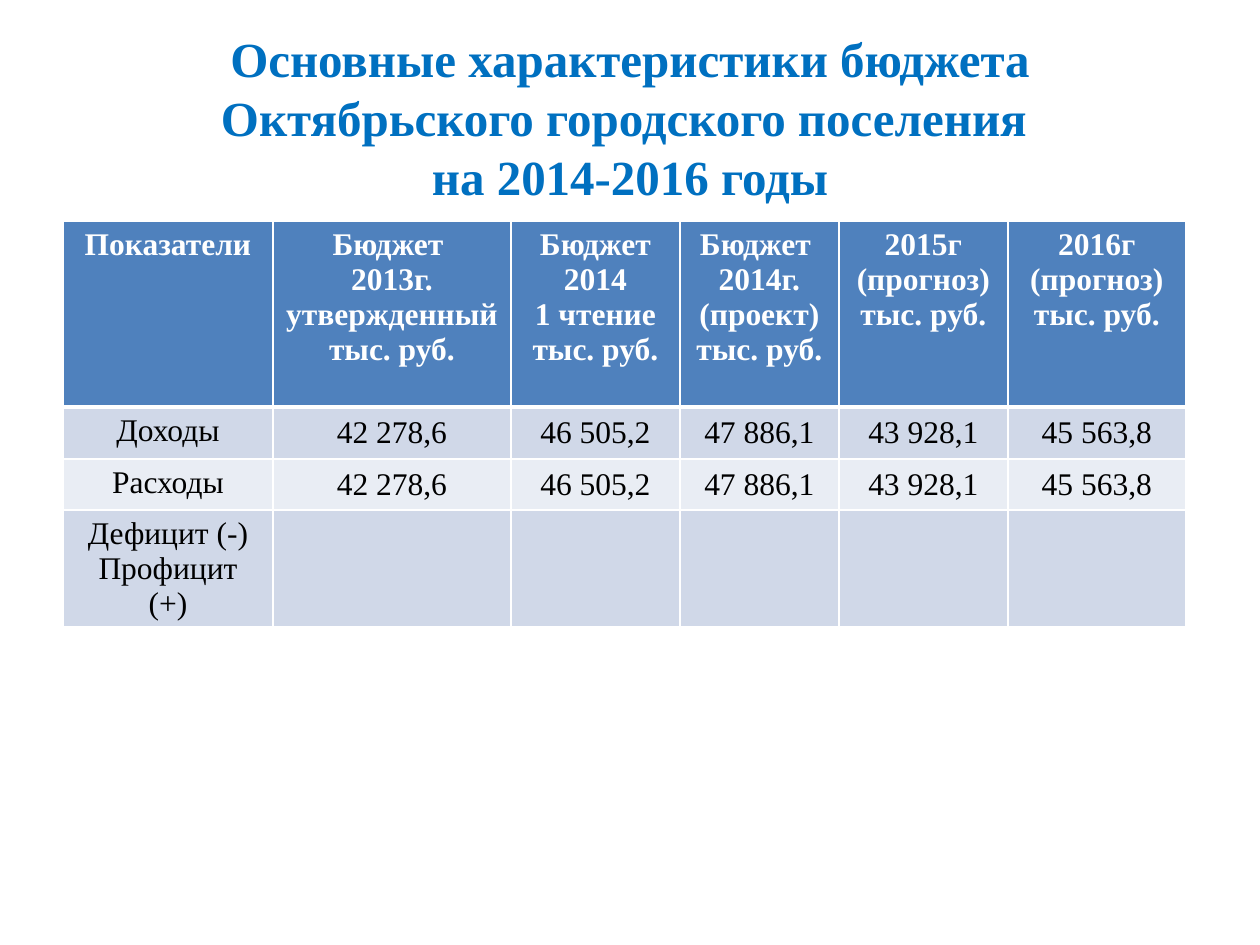
from dataclasses import dataclass

from lxml import etree
from pptx import Presentation
from pptx.dml.color import RGBColor
from pptx.enum.text import MSO_ANCHOR, PP_ALIGN
from pptx.oxml.ns import qn
from pptx.util import Emu, Pt

PX = 914400 // 126
CENTER = PP_ALIGN.CENTER
TOP, MIDDLE = MSO_ANCHOR.TOP, MSO_ANCHOR.MIDDLE
FONT = "Times New Roman"
COLORS = {
    "title": "0070C0",
    "header": "4F81BD",
    "odd_band": "D0D8E8",
    "even_band": "E9EDF4",
    "white": "FFFFFF",
    "black": "000000",
}


@dataclass
class BudgetRow:
    height: int
    fill: str
    texts: list[str]
    color: str = "black"
    bold: bool = False
    value_anchor: MSO_ANCHOR = MIDDLE
    bottom_border: int = 1


AMOUNTS = ["42 278,6", "46 505,2", "47 886,1", "43 928,1", "45 563,8"]
COLUMN_WIDTHS = [210, 238, 169, 159, 169, 178]
BUDGET_ROWS = [
    BudgetRow(186, "header", [
        "Показатели",
        "Бюджет \n2013г.\nутвержденный\nтыс. руб.",
        "Бюджет\n2014\n1 чтение\nтыс. руб.",
        "Бюджет \n2014г.\n(проект)\nтыс. руб.",
        "2015г\n(прогноз)\nтыс. руб.",
        "2016г\n(прогноз)\nтыс. руб.",
    ], color="white", bold=True, value_anchor=TOP, bottom_border=3),
    BudgetRow(52, "odd_band", ["Доходы", *AMOUNTS]),
    BudgetRow(51, "even_band", ["Расходы", *AMOUNTS]),
    BudgetRow(116, "odd_band", ["Дефицит (-)\nПрофицит (+)"] + [""] * len(AMOUNTS)),
]


def px(length: int) -> Emu:
    return Emu(length * PX)


def rgb(name: str) -> RGBColor:
    return RGBColor.from_string(COLORS[name])


def style_text(frame, size: int, color: str, bold: bool) -> None:
    for paragraph in frame.paragraphs:
        paragraph.alignment = CENTER
        font = paragraph.font
        font.name, font.size, font.bold = FONT, Pt(size), bold
        font.color.rgb = rgb(color)


def set_borders(cell, bottom: int, top: int) -> None:
    properties = cell._tc.get_or_add_tcPr()
    widths = {"a:lnL": 1, "a:lnR": 1, "a:lnT": top, "a:lnB": bottom}
    for position, (side, width) in enumerate(widths.items()):
        line = etree.Element(qn(side), w=str(Pt(width)))
        fill = etree.SubElement(line, qn("a:solidFill"))
        etree.SubElement(fill, qn("a:srgbClr"), val=COLORS["white"])
        properties.insert(position, line)


def draw_title(slide, text: str) -> None:
    title = slide.shapes.title
    title.left, title.top, title.width, title.height = map(px, (63, 38, 1134, 158))
    title.text_frame.text = text
    title.text_frame.vertical_anchor = MIDDLE
    style_text(title.text_frame, 28, "title", True)


def draw_budget_table(slide, left: int, top: int) -> None:
    total_height = sum(row.height for row in BUDGET_ROWS)
    table = slide.shapes.add_table(
        len(BUDGET_ROWS), len(COLUMN_WIDTHS),
        px(left), px(top), px(sum(COLUMN_WIDTHS)), px(total_height),
    ).table
    for column, width in zip(table.columns, COLUMN_WIDTHS):
        column.width = px(width)
    border_above = 1
    for row_index, row in enumerate(BUDGET_ROWS):
        table.rows[row_index].height = px(row.height)
        for column_index, text in enumerate(row.texts):
            cell = table.cell(row_index, column_index)
            cell.text = text
            cell.vertical_anchor = row.value_anchor if column_index else TOP
            cell.fill.solid()
            cell.fill.fore_color.rgb = rgb(row.fill)
            style_text(cell.text_frame, 18, row.color, row.bold)
            set_borders(cell, row.bottom_border, border_above)
        border_above = row.bottom_border


def main() -> None:
    presentation = Presentation()
    presentation.slide_width, presentation.slide_height = px(1260), px(945)
    # Title Only layout
    slide = presentation.slides.add_slide(presentation.slide_layouts[5])
    draw_title(slide, "Основные характеристики бюджета Октябрьского "
                      "городского поселения \vна 2014-2016 годы")
    draw_budget_table(slide, 63, 221)
    presentation.save("out.pptx")


if __name__ == "__main__":
    main()
